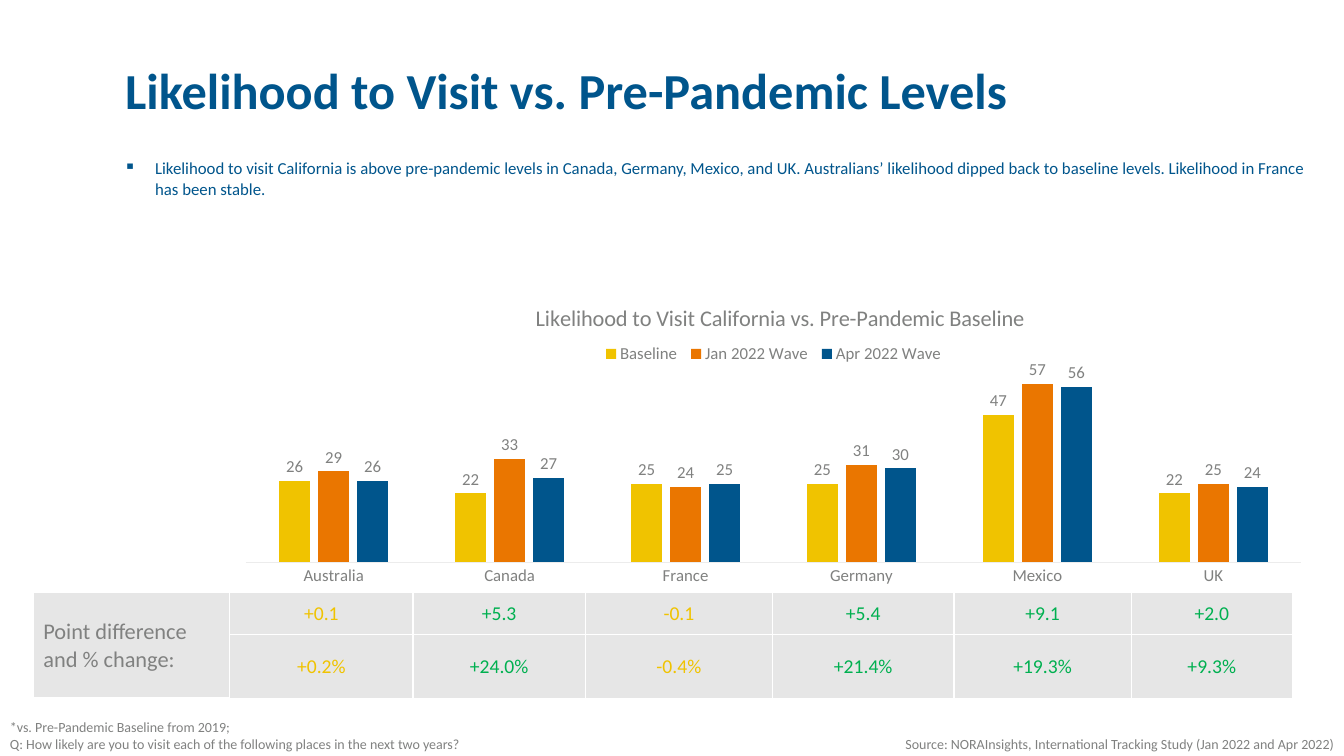
from typing import NamedTuple

from lxml.etree import SubElement
from pptx import Presentation
from pptx.chart.data import CategoryChartData
from pptx.dml.color import RGBColor
from pptx.enum.chart import XL_CHART_TYPE as ChartType
from pptx.enum.chart import XL_LABEL_POSITION as LabelPos
from pptx.enum.chart import XL_LEGEND_POSITION as LegendPos
from pptx.enum.chart import XL_TICK_LABEL_POSITION as TickLabel
from pptx.enum.chart import XL_TICK_MARK as TickMark
from pptx.enum.text import MSO_ANCHOR as Anchor
from pptx.enum.text import MSO_AUTO_SIZE as AutoSize
from pptx.enum.text import PP_ALIGN as Align
from pptx.oxml import parse_xml
from pptx.oxml.ns import nsdecls, qn
from pptx.util import Cm, Pt

COLORS = {
    "blue": "00558C", "orange": "EA7600", "yellow": "F0C300", "green": "00B050",
    "gray": "808180", "cell": "E6E6E6", "axis": "ECECEC", "white": "FFFFFF",
}


class Box(NamedTuple):
    left: float
    top: float
    width: float
    height: float


class Note(NamedTuple):
    box: Box
    text: str
    size: float = 10
    color: str = "gray"
    align: Align = Align.LEFT
    wrap: bool = True
    bullet: str = ""


class Wave(NamedTuple):
    name: str
    color: str
    values: tuple


class Change(NamedTuple):
    country: str
    points: str
    percent: str
    color: str
    width: float


TITLE = Note(Box(2.9, 1.37, 28.09, 5), "Likelihood to Visit vs. Pre-Pandemic Levels", 36, "blue")
NOTES = [
    Note(Box(2.87, 3.86, 30.63, 1.27),
         "Likelihood to visit California is above pre-pandemic levels in Canada, Germany, "
         "Mexico, and UK. Australians’ likelihood dipped back to baseline levels. "
         "Likelihood in France has been stable.", 12, "blue", bullet="▪"),
    Note(Box(0, 17.98, 13.69, 1.55),
         "*vs. Pre-Pandemic Baseline from 2019; \v"
         "Q: How likely are you to visit each of the following places in the next two years?",
         wrap=False),
    Note(Box(18.8, 18.42, 15.06, 0.69),
         "Source: NORAInsights, International Tracking Study (Jan 2022 and Apr 2022)",
         align=Align.RIGHT),
]
CHART_BOX = Box(5.64, 7.06, 27.71, 7.9)
CHART_TITLE = "Likelihood to Visit California vs. Pre-Pandemic Baseline"
WAVES = [
    Wave("Baseline", "yellow", (26, 22, 25, 25, 47, 22)),
    Wave("Jan 2022 Wave", "orange", (29, 33, 24, 31, 57, 25)),
    Wave("Apr 2022 Wave", "blue", (26, 27, 25, 30, 56, 24)),
]
CHANGES = [
    Change("Australia", "+0.1", "+0.2%", "yellow", 4.62),
    Change("Canada", "+5.3", "+24.0%", "green", 4.34),
    Change("France", "-0.1", "-0.4%", "yellow", 4.72),
    Change("Germany", "+5.4", "+21.4%", "green", 4.57),
    Change("Mexico", "+9.1", "+19.3%", "green", 4.47),
    Change("UK", "+2.0", "+9.3%", "green", 4.06),
]
HEAD_WIDTH, ROW_HEIGHT = 4.95, 1.04


def set_all(obj, **values) -> None:
    for name, value in values.items():
        setattr(obj, name, value)


def rgb(color: str) -> RGBColor:
    return RGBColor.from_string(COLORS[color])


def cm(box: Box) -> list[Cm]:
    return [Cm(v) for v in box]


def style_font(font, size: float, color: str, bold: bool = False) -> None:
    set_all(font, name="Calibri", size=Pt(size), bold=bold)
    font.color.rgb = rgb(color)


def fill_solid(obj, color: str) -> None:
    obj.fill.solid()
    obj.fill.fore_color.rgb = rgb(color)


def write(tf, text: str, size: float, color: str, align: Align, bold: bool = False):
    tf.text = text
    p = tf.paragraphs[0]
    p.alignment = align
    for r in p.runs:
        style_font(r.font, size, color, bold)
    return p


def add_title(slide) -> None:
    sp = slide.shapes.title
    set_all(sp, **dict(zip(Box._fields, cm(TITLE.box))))
    tf = sp.text_frame
    set_all(tf, word_wrap=True, vertical_anchor=Anchor.TOP, auto_size=AutoSize.NONE)
    write(tf, TITLE.text, TITLE.size, TITLE.color, TITLE.align, True).space_before = Pt(10)


def add_note(slide, note: Note) -> None:
    tf = slide.shapes.add_textbox(*cm(note.box)).text_frame
    tf.word_wrap = note.wrap
    p = write(tf, note.text, note.size, note.color, note.align)
    if note.bullet:
        pPr = p._p.get_or_add_pPr()
        pPr.set("marL", str(Cm(0.79)))
        pPr.set("indent", str(-Cm(0.79)))
        SubElement(pPr, qn("a:buChar")).set("char", note.bullet)


def place(element, x: float, y: float, w: float = 0, h: float = 0, inner: bool = False) -> None:
    """Fix a chart part at fractions of the chart area."""
    values = {"xMode": "edge", "yMode": "edge", "x": x, "y": y}
    if inner:
        values = {"layoutTarget": "inner"} | values
    if w:
        values |= {"w": w, "h": h}
    parts = "".join(f'<c:{tag} val="{value}"/>' for tag, value in values.items())
    for old in element.findall(qn("c:layout")):
        element.remove(old)
    layout = parse_xml(f'<c:layout {nsdecls("c")}><c:manualLayout>{parts}'
                       "</c:manualLayout></c:layout>")
    before = [e for e in element if e.tag in (qn("c:tx"), qn("c:legendPos"))]
    element.insert(len(before), layout)


def add_likelihood_chart(slide) -> None:
    data = CategoryChartData(number_format="0")
    data.categories = [change.country for change in CHANGES]
    for wave in WAVES:
        data.add_series(wave.name, wave.values)
    chart = slide.shapes.add_chart(ChartType.COLUMN_CLUSTERED, *cm(CHART_BOX), data).chart
    style_font(chart.font, 10, "gray")

    write(chart.chart_title.text_frame, CHART_TITLE, 16, "gray", Align.CENTER)
    place(chart.chart_title._element, 0.28, 0.06)
    chart.has_legend = True
    set_all(chart.legend, position=LegendPos.TOP, include_in_layout=False)
    style_font(chart.legend.font, 12, "gray")
    place(chart.legend._element, 0.34, 0.2, 0.32, 0.07)

    axis = chart.category_axis
    axis.major_tick_mark = TickMark.NONE
    style_font(axis.tick_labels.font, 12, "gray")
    axis.format.line.color.rgb = rgb("axis")
    axis.format.line.width = Pt(0.75)
    axis = chart.value_axis
    set_all(axis, minimum_scale=0, maximum_scale=60, has_major_gridlines=False,
            major_tick_mark=TickMark.NONE, tick_label_position=TickLabel.NONE)
    axis.format.line.fill.background()

    plot = chart.plots[0]
    set_all(plot, gap_width=219, overlap=-27, vary_by_categories=False)
    for wave, series in zip(WAVES, plot.series):
        fill_solid(series.format, wave.color)
        labels = series.data_labels
        set_all(labels, show_value=True, position=LabelPos.OUTSIDE_END,
                number_format="0", number_format_is_linked=False)
        style_font(labels.font, 12, "gray")
    place(chart._chartSpace.chart.plotArea, 0.02, 0.3, 0.96, 0.6, inner=True)


def format_cell(cell, bottom: float = 1) -> None:
    """Give a cell its gray fill and white borders."""
    cell.vertical_anchor = Anchor.MIDDLE
    fill_solid(cell, "cell")
    tcPr = cell._tc.get_or_add_tcPr()
    for i, (side, width) in enumerate({"L": 1, "R": 1, "T": 1, "B": bottom}.items()):
        tcPr.insert(i, parse_xml(
            f'<a:ln{side} {nsdecls("a")} w="{Pt(width)}"><a:solidFill>'
            f'<a:srgbClr val="{COLORS["white"]}"/></a:solidFill></a:ln{side}>'))


def add_change_table(slide) -> None:
    widths = [HEAD_WIDTH] + [change.width for change in CHANGES]
    box = Box(0.84, 14.94, sum(widths), 2 * ROW_HEIGHT)
    table = slide.shapes.add_table(2, len(widths), *cm(box)).table
    set_all(table, first_row=False, horz_banding=False)
    for column, width in zip(table.columns, widths):
        column.width = Cm(width)
    head = table.cell(0, 0)
    head.merge(table.cell(1, 0))
    write(head.text_frame, "Point difference and % change:", 16, "gray", Align.LEFT)
    for row in range(2):
        format_cell(table.cell(row, 0), bottom=3)
        for col, change in enumerate(CHANGES, 1):
            cell = table.cell(row, col)
            format_cell(cell)
            set_all(cell, margin_left=Cm(0.02), margin_right=Cm(0.02),
                    margin_top=Cm(0.02), margin_bottom=0)
            text = (change.points, change.percent)[row]
            write(cell.text_frame, text, 14, change.color, Align.CENTER)


def main() -> None:
    prs = Presentation()
    set_all(prs, slide_width=Cm(33.87), slide_height=Cm(19.05))
    slide = prs.slides.add_slide(prs.slide_layouts.get_by_name("Title Only"))
    fill_solid(slide.background, "white")
    add_title(slide)
    add_change_table(slide)
    add_likelihood_chart(slide)
    for note in NOTES:
        add_note(slide, note)
    prs.save("out.pptx")


if __name__ == "__main__":
    main()
